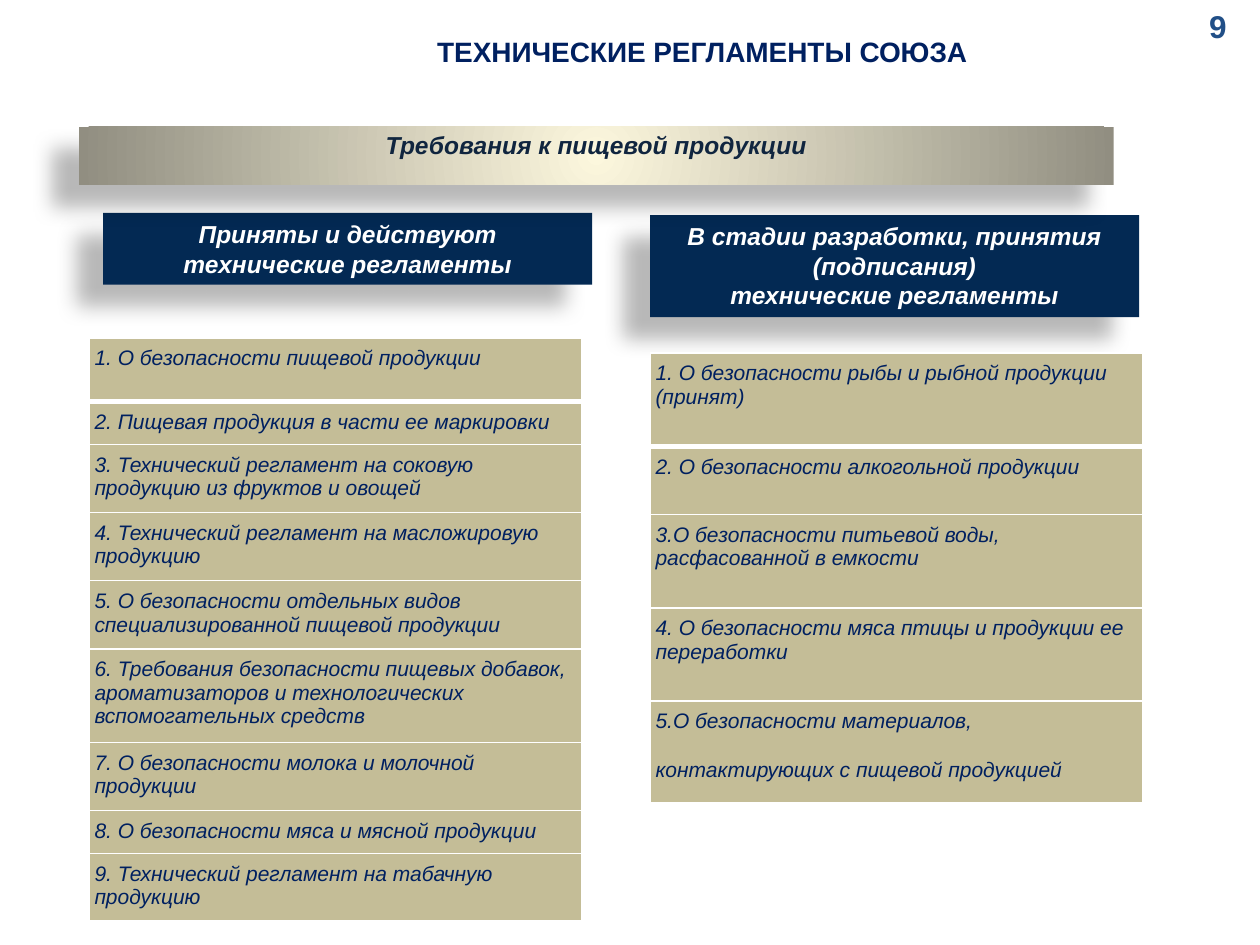
from dataclasses import dataclass

from lxml.etree import SubElement
from pptx import Presentation
from pptx.dml.color import RGBColor
from pptx.enum.shapes import MSO_SHAPE
from pptx.enum.text import MSO_ANCHOR, PP_ALIGN
from pptx.oxml.ns import qn
from pptx.util import Pt

WHITE = RGBColor(0xFF, 0xFF, 0xFF)
BLACK = RGBColor(0x00, 0x00, 0x00)
NAVY = RGBColor(0x00, 0x20, 0x60)
DARK_BLUE = RGBColor(0x03, 0x29, 0x53)
NUMBER_BLUE = RGBColor(0x21, 0x4F, 0x87)
BANNER_TEXT = RGBColor(0x10, 0x25, 0x3F)
BANNER_CENTER = RGBColor(0xFC, 0xF7, 0xDD)
BANNER_EDGE = RGBColor(0x91, 0x8E, 0x81)
SAND = RGBColor(0xC4, 0xBD, 0x97)


@dataclass(frozen=True)
class Box:
    left: float
    top: float
    width: float
    height: float

    def lengths(self):
        return Pt(self.left), Pt(self.top), Pt(self.width), Pt(self.height)


@dataclass(frozen=True)
class Style:
    size: float
    color: RGBColor
    bold: bool = False
    italic: bool = False
    font: str = "Arial"


@dataclass(frozen=True)
class Row:
    text: str
    height: float
    alignment: PP_ALIGN = PP_ALIGN.LEFT


@dataclass(frozen=True)
class Column:
    header_box: Box
    header: tuple[str, ...]
    table_left: float
    table_top: float
    rows: tuple[Row, ...]


TABLE_WIDTH = 281.5
HEADER_STYLE = Style(14, WHITE, bold=True, italic=True)
CELL_STYLE = Style(12, NAVY, italic=True)
SPACER_STYLE = Style(28, BLACK, font="Cambria")

ADOPTED = Column(
    Box(59, 121.7, 279.4, 41),
    ("Приняты и действуют технические регламенты",),
    51.1, 193,
    (
        Row("1. О безопасности пищевой продукции", 36.5),
        Row("2. Пищевая продукция в части ее маркировки", 24, PP_ALIGN.JUSTIFY),
        Row("3. Технический регламент на соковую продукцию из фруктов и овощей", 39),
        Row("4. Технический регламент на масложировую продукцию", 39),
        Row("5. О безопасности отдельных видов специализированной пищевой продукции", 39),
        Row("6. Требования безопасности пищевых добавок, ароматизаторов "
            "и технологических вспомогательных средств", 53.4),
        Row("7. О безопасности молока и молочной продукции", 39),
        Row("8. О безопасности мяса и мясной продукции", 24.4),
        Row("9. Технический регламент на табачную продукцию", 38.4),
    ),
)
IN_PROGRESS = Column(
    Box(371.5, 122.9, 279.4, 58.3),
    ("В стадии разработки, принятия (подписания)", "технические регламенты"),
    371.7, 201.7,
    (
        Row("1. О безопасности рыбы и рыбной продукции (принят)", 53.3),
        Row("2. О безопасности алкогольной продукции", 39),
        Row("3.О безопасности питьевой воды, расфасованной в емкости", 53.4),
        Row("4. О безопасности мяса птицы и продукции ее переработки", 53.3),
        Row("5.О безопасности материалов, контактирующих с пищевой продукцией", 57.6),
    ),
)


def add_run(paragraph, text: str, style: Style) -> None:
    run = paragraph.add_run()
    run.text = text
    font = run.font
    font.name = style.font
    font.size = Pt(style.size)
    font.bold = style.bold
    font.italic = style.italic
    font.color.rgb = style.color


def write_centered(shape, lines: tuple[str, ...], style: Style, anchor: MSO_ANCHOR) -> None:
    frame = shape.text_frame
    frame.word_wrap = True
    frame.vertical_anchor = anchor
    for index, line in enumerate(lines):
        paragraph = frame.add_paragraph() if index else frame.paragraphs[0]
        paragraph.alignment = PP_ALIGN.CENTER
        add_run(paragraph, line, style)


def add_label(slide, box: Box, text: str, style: Style, anchor: MSO_ANCHOR) -> None:
    write_centered(slide.shapes.add_textbox(*box.lengths()), (text,), style, anchor)


def add_shadowed_rectangle(slide, box: Box):
    shape = slide.shapes.add_shape(MSO_SHAPE.RECTANGLE, *box.lengths())
    shape.line.fill.background()
    shape.shadow.inherit = False
    effects = shape._element.spPr.find(qn("a:effectLst"))
    shadow = SubElement(effects, qn("a:outerShdw"), blurRad=str(Pt(11.8)),
                        dist=str(Pt(19.7)), dir=str(141 * 60000),
                        algn="ctr", rotWithShape="0")
    color = SubElement(shadow, qn("a:srgbClr"), val=str(BLACK))
    SubElement(color, qn("a:alpha"), val="28000")
    return shape


def set_border(cell, side: str, width: float) -> None:
    line = SubElement(cell._tc.get_or_add_tcPr(), qn(f"a:ln{side}"), w=str(Pt(width)))
    fill = SubElement(line, qn("a:solidFill"))
    SubElement(fill, qn("a:srgbClr"), val=str(WHITE))


def add_regulation_table(slide, column: Column):
    rows = column.rows
    box = Box(column.table_left, column.table_top, TABLE_WIDTH,
              sum(row.height for row in rows))
    table = slide.shapes.add_table(len(rows), 1, *box.lengths()).table
    table.first_row = False
    table.horz_banding = False
    for index, row in enumerate(rows):
        table.rows[index].height = Pt(row.height)
        cell = table.cell(index, 0)
        # A thick line separates the first row from the rest
        widths = {"L": 1, "R": 1, "T": 3 if index == 1 else 1, "B": 1 if index else 3}
        for side, width in widths.items():
            set_border(cell, side, width)
        cell.fill.solid()
        cell.fill.fore_color.rgb = SAND
        cell.margin_left = cell.margin_right = Pt(2.9)
        cell.margin_top = cell.margin_bottom = Pt(5)
        paragraph = cell.text_frame.paragraphs[0]
        paragraph.alignment = row.alignment
        add_run(paragraph, row.text, CELL_STYLE)
    return table


def add_column(slide, column: Column):
    header = add_shadowed_rectangle(slide, column.header_box)
    header.fill.solid()
    header.fill.fore_color.rgb = DARK_BLUE
    write_centered(header, column.header, HEADER_STYLE, MSO_ANCHOR.TOP)
    return add_regulation_table(slide, column)


def add_banner(slide) -> None:
    banner = add_shadowed_rectangle(slide, Box(45.2, 72.6, 591.2, 33.1))
    banner.fill.gradient()
    stops = banner.fill.gradient_stops
    for stop, position, color in zip(stops, (0, 1), (BANNER_CENTER, BANNER_EDGE)):
        stop.position = position
        stop.color.rgb = color
    # Radial gradient from the middle
    gradient = banner._element.spPr.find(qn("a:gradFill"))
    gradient.remove(gradient.find(qn("a:lin")))
    radial = SubElement(gradient, qn("a:path"), path="circle")
    SubElement(radial, qn("a:fillToRect"), l="50000", t="50000", r="50000", b="50000")
    write_centered(banner, ("Требования к пищевой продукции",),
                   Style(14, BANNER_TEXT, bold=True, italic=True), MSO_ANCHOR.TOP)
    banner.text_frame.paragraphs[0].line_spacing = 0.9


def main() -> None:
    presentation = Presentation()
    presentation.slide_width = Pt(720)
    presentation.slide_height = Pt(540)
    slide = presentation.slides.add_slide(presentation.slide_layouts[6])

    # Page number and title
    add_label(slide, Box(671.8, 0.7, 48.2, 30.2), "9",
              Style(18, NUMBER_BLUE, bold=True), MSO_ANCHOR.TOP)
    add_label(slide, Box(96.5, 7.2, 609.8, 43.9), "ТЕХНИЧЕСКИЕ РЕГЛАМЕНТЫ СОЮЗА",
              Style(16, NAVY, bold=True), MSO_ANCHOR.MIDDLE)

    # Two columns of regulations; the last row ends with a tall space
    add_column(slide, ADOPTED)
    table = add_column(slide, IN_PROGRESS)
    last_cell = table.cell(len(IN_PROGRESS.rows) - 1, 0)
    add_run(last_cell.text_frame.paragraphs[0], " ", SPACER_STYLE)

    # Common heading
    add_banner(slide)
    presentation.save("out.pptx")


if __name__ == "__main__":
    main()
